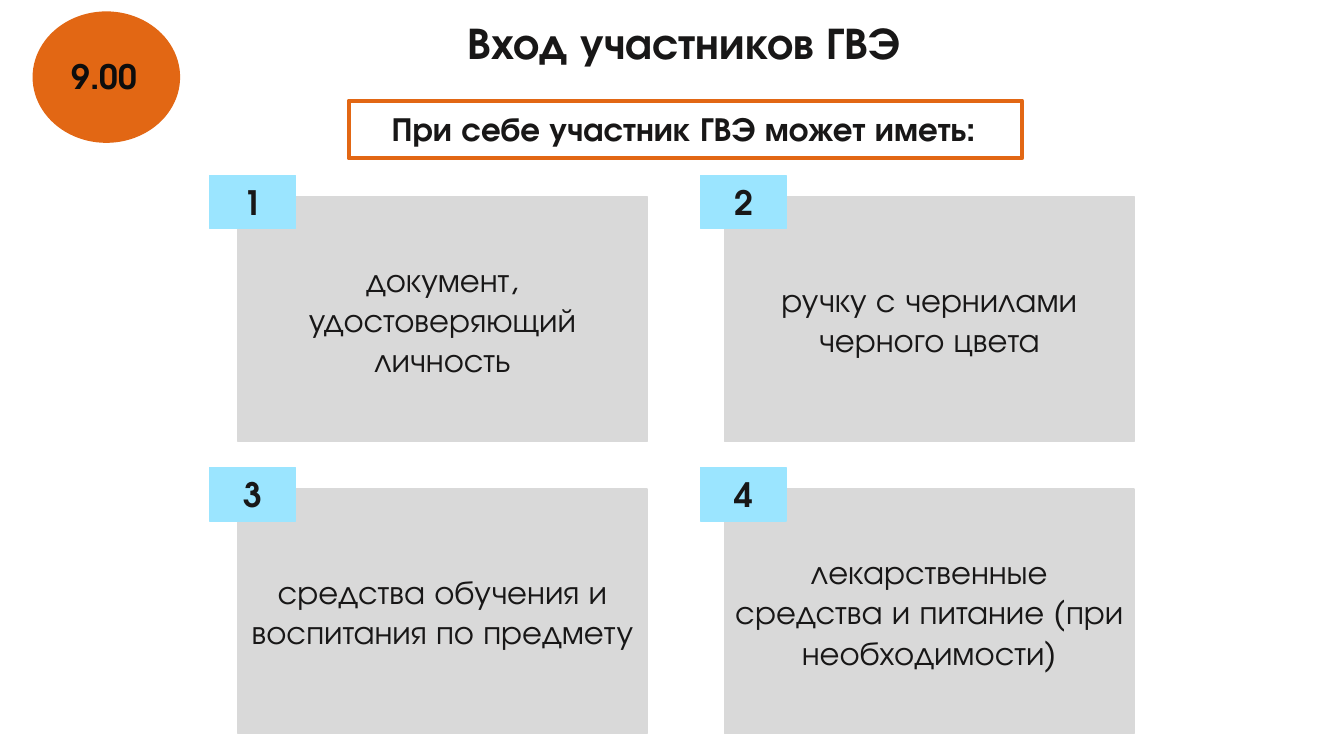
from pptx import Presentation
from pptx.dml.color import RGBColor
from pptx.enum.shapes import MSO_SHAPE
from pptx.enum.text import MSO_ANCHOR, PP_ALIGN
from pptx.util import Pt

TITLE = "Вход участников ГВЭ"
TIME = "9.00"
HEADING = "При себе участник ГВЭ может иметь:"
ITEMS = [
    "документ, удостоверяющий личность",
    "ручку с чернилами черного цвета",
    "средства обучения и воспитания по предмету",
    "лекарственные средства и питание (при необходимости)",
]

FONT = "TeX Gyre Adventor"
INK, BLACK = "181717", "0D0D0D"
ORANGE, GREY, BLUE = "E26714", "D9D9D9", "9BE5FF"

COLUMNS = 2
CARD_X, BADGE_X = (169.92, 517.68), (149.76, 500.4)
CARD_Y, BADGE_Y, ROW_STEP = 140.4, 125.28, 208.8
CARD_SIZE, BADGE_SIZE = (292.32, 174.96), (61.2, 38.16)


def rgb(color):
    return RGBColor.from_string(color)


def add_box(kind, x, y, w, h, line, fill=None, weight=1):
    sp = slide.shapes.add_shape(kind, Pt(x), Pt(y), Pt(w), Pt(h))
    sp.shadow.inherit = False
    if fill:
        sp.fill.solid()
        sp.fill.fore_color.rgb = rgb(fill)
    else:
        sp.fill.background()
    sp.line.color.rgb = rgb(line)
    sp.line.width = Pt(weight)
    return sp


def write(sp, text, size=24, color=INK, bold=False, align=PP_ALIGN.CENTER,
          anchor=MSO_ANCHOR.MIDDLE, wrap=True):
    tf = sp.text_frame
    tf.word_wrap = wrap
    tf.vertical_anchor = anchor
    p = tf.paragraphs[0]
    p.alignment = align
    r = p.add_run()
    r.text = text
    r.font.name = FONT
    r.font.size = Pt(size)
    r.font.bold = bold
    r.font.color.rgb = rgb(color)


def add_label(text, x, y, w, h, **fmt):
    sp = slide.shapes.add_textbox(Pt(x), Pt(y), Pt(w), Pt(h))
    write(sp, text, bold=True, anchor=MSO_ANCHOR.TOP, **fmt)


prs = Presentation()
prs.slide_width, prs.slide_height = Pt(960), Pt(540)
slide = prs.slides.add_slide(prs.slide_layouts[6])

for i, item in enumerate(ITEMS):
    row, col = divmod(i, COLUMNS)
    dy = row * ROW_STEP
    card = add_box(MSO_SHAPE.RECTANGLE, CARD_X[col], CARD_Y + dy, *CARD_SIZE,
                   line=GREY, fill=GREY)
    write(card, item)
    badge = add_box(MSO_SHAPE.RECTANGLE, BADGE_X[col], BADGE_Y + dy, *BADGE_SIZE,
                    line=BLUE, fill=BLUE)
    write(badge, str(i + 1), bold=True)

add_label(TITLE, 310.32, 7.2, 357.12, 46.08, size=32, wrap=False)

add_box(MSO_SHAPE.OVAL, 23.76, 8.64, 104.4, 92.88, line=ORANGE, fill=ORANGE)
add_label(TIME, 43.92, 36.72, 64.08, 36, color=BLACK, align=PP_ALIGN.LEFT)

add_box(MSO_SHAPE.RECTANGLE, 249.12, 72, 480.96, 41.04, line=ORANGE, weight=3)
add_label(HEADING, 231.12, 73.44, 514.8, 36)

prs.save("out.pptx")
